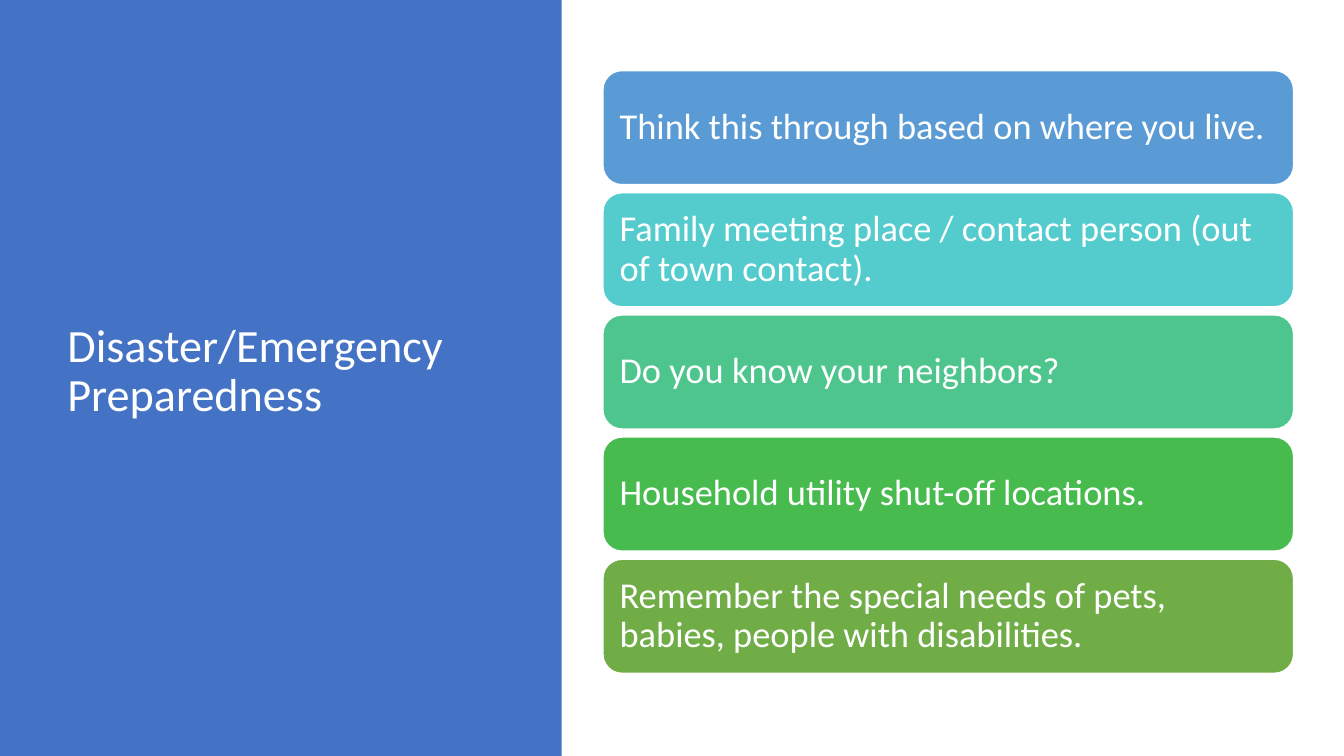
from pptx import Presentation
from pptx.dml.color import RGBColor
from pptx.enum.shapes import MSO_SHAPE
from pptx.enum.text import MSO_ANCHOR, PP_ALIGN
from pptx.util import Inches, Pt

RECTANGLE = MSO_SHAPE.RECTANGLE
ROUNDED = MSO_SHAPE.ROUNDED_RECTANGLE
MIDDLE = MSO_ANCHOR.MIDDLE
LEFT = PP_ALIGN.LEFT

WIDTH, HEIGHT = 13.33, 7.5
PANEL_WIDTH = 5.57
WHITE = "FFFFFF"
TITLE = "Disaster/Emergency Preparedness"
TIPS = [
    ("Think this through based on where you live.", "5B9BD5"),
    ("Family meeting place / contact person (out of town contact).", "54CCCD"),
    ("Do you know your neighbors?", "4DC58D"),
    ("Household utility shut-off locations.", "48BB4F"),
    ("Remember the special needs of pets, babies, people with disabilities.", "70AD47"),
]


def color(hex_string):
    return RGBColor.from_string(hex_string)


def add_block(slide, kind, box, fill):
    shape = slide.shapes.add_shape(kind, *map(Inches, box))
    shape.shadow.inherit = False
    shape.fill.solid()
    shape.fill.fore_color.rgb = color(fill)
    shape.line.fill.background()
    return shape


def write_text(shape, text, size):
    frame = shape.text_frame
    frame.word_wrap = True
    frame.vertical_anchor = MIDDLE
    paragraph = frame.paragraphs[0]
    paragraph.text = text
    paragraph.alignment = LEFT
    paragraph.line_spacing = 0.9
    paragraph.font.name = "Calibri"
    paragraph.font.size = Pt(size)
    paragraph.font.color.rgb = color(WHITE)
    return frame


def add_title_panel(slide, box):
    left, top, width, height = box
    add_block(slide, RECTANGLE, box, "4472C4")
    title_box = (left + 0.57, top + 0.68, width - 1.41, height - 1.48)
    title = slide.shapes.add_textbox(*map(Inches, title_box))
    write_text(title, TITLE, 33)


def add_tip_list(slide, box, gap=0.08):
    left, top, width, height = box
    pitch = (height + gap) / len(TIPS)
    for row, (text, fill) in enumerate(TIPS):
        card_box = (left, top + row * pitch, width, pitch - gap)
        card = add_block(slide, ROUNDED, card_box, fill)
        card.line.color.rgb = color(WHITE)
        card.line.width = Pt(1)
        frame = write_text(card, text, 26)
        frame.margin_left = frame.margin_right = Inches(0.11)
        frame.margin_top = frame.margin_bottom = Inches(0.11)


def main():
    presentation = Presentation()
    presentation.slide_width = Inches(WIDTH)
    presentation.slide_height = Inches(HEIGHT)
    slide = presentation.slides.add_slide(presentation.slide_layouts[6])
    add_title_panel(slide, (0, 0, PANEL_WIDTH, HEIGHT))
    add_tip_list(slide, (PANEL_WIDTH + 0.41, 0.7, 6.85, 5.98))
    presentation.save("out.pptx")


if __name__ == "__main__":
    main()
